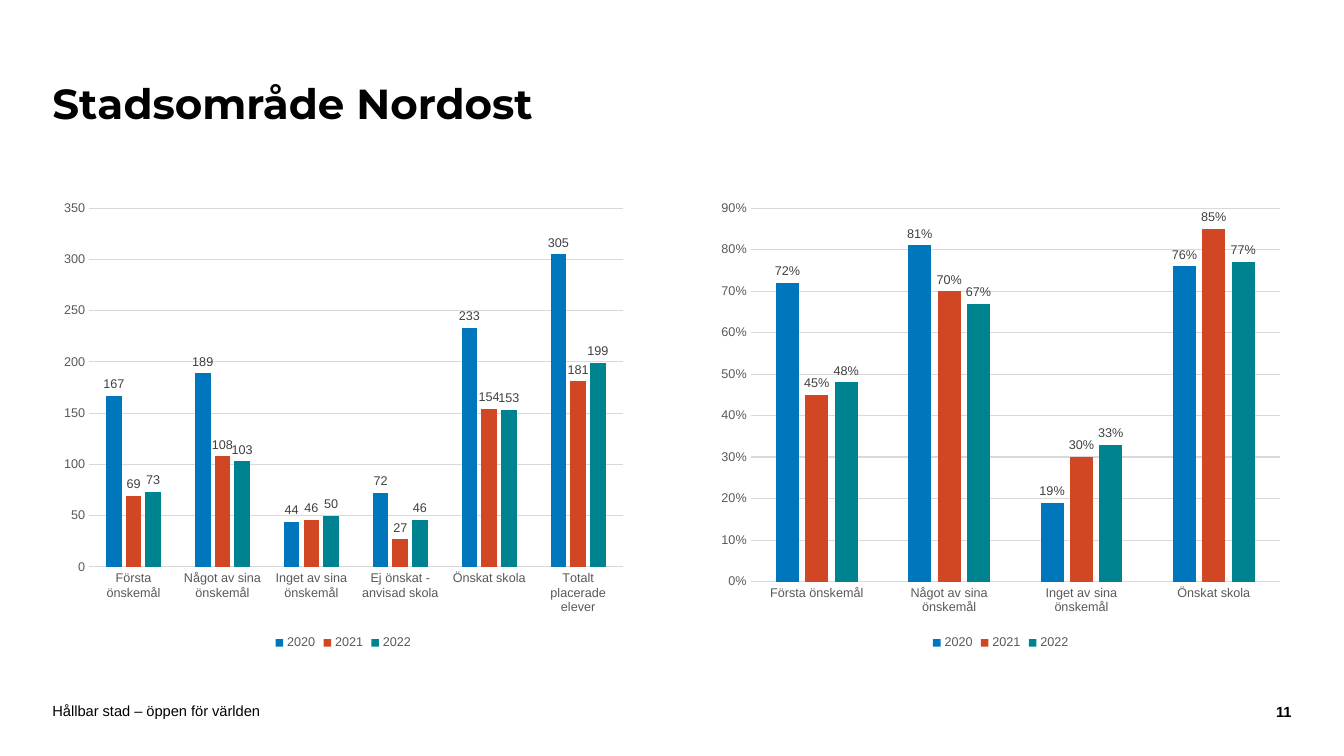
import pptx
import pptx.chart.data
import pptx.dml.color
import pptx.enum.chart
import pptx.enum.text
import pptx.util

Inches = pptx.util.Inches
Pt = pptx.util.Pt
RGBColor = pptx.dml.color.RGBColor
PP_ALIGN = pptx.enum.text.PP_ALIGN

BLACK = RGBColor(0x00, 0x00, 0x00)
LABEL_GRAY = RGBColor(0x40, 0x40, 0x40)
AXIS_GRAY = RGBColor(0x59, 0x59, 0x59)
GRID_GRAY = RGBColor(0xD9, 0xD9, 0xD9)
BLUE = RGBColor(0x00, 0x77, 0xBC)
RED = RGBColor(0xD2, 0x47, 0x23)
TEAL = RGBColor(0x00, 0x83, 0x91)

YEARS = ("2020", "2021", "2022")
COUNTS = {
    "Första önskemål": (167, 69, 73),
    "Något av sina önskemål": (189, 108, 103),
    "Inget av sina önskemål": (44, 46, 50),
    "Ej önskat - anvisad skola": (72, 27, 46),
    "Önskat skola": (233, 154, 153),
    "Totalt placerade elever": (305, 181, 199),
}
SHARES = {
    "Första önskemål": (0.72, 0.45, 0.48),
    "Något av sina önskemål": (0.81, 0.70, 0.67),
    "Inget av sina önskemål": (0.19, 0.30, 0.33),
    "Önskat skola": (0.76, 0.85, 0.77),
}


def set_font(font, size=9, color=AXIS_GRAY, name="Arial", bold=False):
    font.size = Pt(size)
    font.name = name
    font.bold = bold
    font.color.rgb = color


def write(tf, text, align=PP_ALIGN.LEFT, spacing=1.0, **style):
    p = tf.paragraphs[0]
    p.alignment = align
    p.line_spacing = spacing
    r = p.add_run()
    r.text = text
    set_font(r.font, **style)


class Deck:
    colors = (BLUE, RED, TEAL)

    def __init__(self):
        self.prs = pptx.Presentation()
        self.prs.slide_width = Inches(13.33)
        self.prs.slide_height = Inches(7.5)
        self.s = self.prs.slides.add_slide(self.prs.slide_layouts[6])

    def text(self, box, text, inset=0, **style):
        tf = self.s.shapes.add_textbox(*map(Inches, box)).text_frame
        tf.word_wrap = True
        tf.vertical_anchor = pptx.enum.text.MSO_ANCHOR.MIDDLE
        tf.margin_left = tf.margin_right = 0
        tf.margin_top = tf.margin_bottom = Inches(inset)
        write(tf, text, **style)

    def line(self, line):
        line.color.rgb = GRID_GRAY
        line.width = Pt(0.75)

    def axes(self, chart, top, step, fmt):
        for axis in (chart.category_axis, chart.value_axis):
            axis.major_tick_mark = pptx.enum.chart.XL_TICK_MARK.NONE
            axis.minor_tick_mark = pptx.enum.chart.XL_TICK_MARK.NONE
            set_font(axis.tick_labels.font)
        self.line(chart.category_axis.format.line)
        value = chart.value_axis
        value.minimum_scale = 0
        value.maximum_scale = top
        value.major_unit = step
        value.format.line.fill.background()
        value.tick_labels.number_format = fmt
        value.tick_labels.number_format_is_linked = False
        self.line(value.major_gridlines.format.line)

    def series(self, series, color, fmt):
        series.format.fill.solid()
        series.format.fill.fore_color.rgb = color
        series.invert_if_negative = False
        labels = series.data_labels
        labels.show_value = True
        labels.position = pptx.enum.chart.XL_LABEL_POSITION.OUTSIDE_END
        labels.number_format = fmt
        labels.number_format_is_linked = False
        set_font(labels.font, color=LABEL_GRAY)

    def columns(self, box, rows, top, step, fmt):
        data = pptx.chart.data.CategoryChartData(number_format=fmt)
        data.categories = list(rows)
        for year, values in zip(YEARS, zip(*rows.values())):
            data.add_series(year, values)
        kind = pptx.enum.chart.XL_CHART_TYPE.COLUMN_CLUSTERED
        chart = self.s.shapes.add_chart(kind, *map(Inches, box), data).chart
        set_font(chart.font, size=10, color=BLACK)
        chart.has_title = False
        chart.has_legend = True
        chart.legend.position = pptx.enum.chart.XL_LEGEND_POSITION.BOTTOM
        chart.legend.include_in_layout = False
        set_font(chart.legend.font)
        self.axes(chart, top, step, fmt)
        plot = chart.plots[0]
        plot.gap_width = 219
        plot.overlap = -27
        plot.vary_by_categories = False
        for series, color in zip(plot.series, self.colors):
            self.series(series, color, fmt)


def main():
    deck = Deck()
    deck.text((0.52, 0.42, 10.03, 1.26), "Stadsområde Nordost", inset=0.05,
              spacing=0.9, size=30, color=BLACK, name="Montserrat", bold=True)
    deck.columns((0.52, 1.9, 5.77, 4.59), COUNTS, 350, 50, "General")
    deck.columns((7.04, 1.9, 5.77, 4.59), SHARES, 0.9, 0.1, "0%")
    deck.text((0.52, 6.97, 9.45, 0.16), "Hållbar stad – öppen för världen",
              size=10.5, color=BLACK)
    deck.text((12.17, 6.98, 0.64, 0.16), "11", align=PP_ALIGN.RIGHT,
              size=10.5, color=BLACK, bold=True)
    deck.prs.save("out.pptx")


if __name__ == "__main__":
    main()
